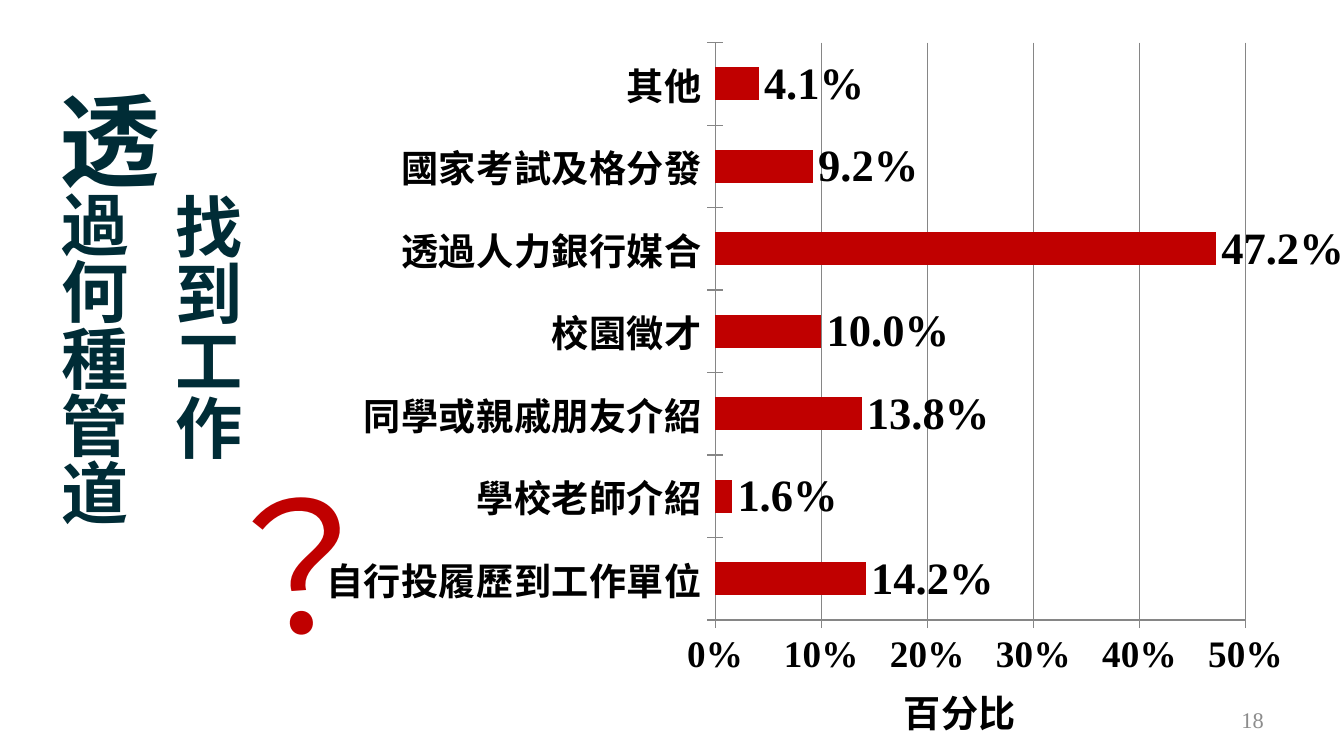
from lxml.etree import SubElement
from pptx import Presentation
from pptx.chart.data import CategoryChartData
from pptx.dml.color import RGBColor
from pptx.enum.chart import XL_CHART_TYPE as ChartType
from pptx.enum.chart import XL_LABEL_POSITION as LabelPos
from pptx.enum.chart import XL_TICK_MARK as Tick
from pptx.enum.text import MSO_ANCHOR as Anchor
from pptx.enum.text import PP_ALIGN as Align
from pptx.oxml.ns import qn
from pptx.util import Emu, Pt

PX = 914400 / 134.4
COLORS = {"red": "C00000", "teal": "002C36", "black": "000000",
          "axis": "868686", "number": "8C8C8C"}
JP, SC, TIMES = "Noto Sans CJK JP", "Noto Sans CJK SC", "Times New Roman"
CHANNELS = [("自行投履歷到工作單位", 0.142), ("學校老師介紹", 0.016),
            ("同學或親戚朋友介紹", 0.138), ("校園徵才", 0.1),
            ("透過人力銀行媒合", 0.472), ("國家考試及格分發", 0.092),
            ("其他", 0.041)]


def px(n):
    return Emu(round(n * PX))


def rgb(name):
    return RGBColor.from_string(COLORS[name])


def style_font(font, size, color, latin, east=SC, bold=False):
    font.size, font.bold, font.name = Pt(size), bold, latin
    font.color.rgb = rgb(color)
    SubElement(font._element, qn("a:ea")).set("typeface", east)
    # The latin and East Asian faces must stay in schema order
    font._element.append(font._element.find(qn("a:ea")))


def add_text_box(slide, box, anchor=Anchor.TOP):
    s = slide.shapes.add_textbox(*map(px, box))
    s.text_frame.word_wrap = True
    s.text_frame.vertical_anchor = anchor
    return s


def add_run(p, text, size, color, latin, east=SC, bold=False):
    r = p.add_run()
    r.text = text
    style_font(r.font, size, color, latin, east, bold)


def set_layout(parent, after, **values):
    """Place a chart part by fractions of the chart area."""
    for old in parent.findall(qn("c:layout")):
        parent.remove(old)
    layout = SubElement(parent, qn("c:layout"))
    manual = SubElement(layout, qn("c:manualLayout"))
    for key, value in values.items():
        SubElement(manual, qn(f"c:{key}")).set("val", str(value))
    if after is None:
        parent.insert(0, layout)
    else:
        after.addnext(layout)


def style_axis(axis):
    axis.major_tick_mark = Tick.CROSS
    axis.minor_tick_mark = Tick.NONE
    axis.format.line.color.rgb = rgb("axis")
    style_font(axis.tick_labels.font, 20, "black", TIMES, bold=True)


def add_bar_chart(slide, box):
    data = CategoryChartData(number_format="0.0%")
    data.categories = [name for name, _ in CHANNELS]
    data.add_series("Series 1", [share for _, share in CHANNELS])
    chart = slide.shapes.add_chart(ChartType.BAR_CLUSTERED, *map(px, box),
                                   data).chart
    chart.has_legend = chart.has_title = False
    style_font(chart.font, 20, "black", TIMES)

    # Bars and value labels
    plot = chart.plots[0]
    plot.gap_width, plot.vary_by_categories = 150, False
    fill = plot.series[0].format.fill
    fill.solid()
    fill.fore_color.rgb = rgb("red")
    plot.has_data_labels = True
    labels = plot.data_labels
    labels.show_value = True
    labels.number_format, labels.number_format_is_linked = "0.0%", False
    labels.position = LabelPos.OUTSIDE_END
    style_font(labels.font, 24, "black", TIMES, bold=True)

    # Axes
    style_axis(chart.category_axis)
    axis = chart.value_axis
    style_axis(axis)
    axis.minimum_scale, axis.maximum_scale, axis.major_unit = 0, 0.5, 0.1
    axis.tick_labels.number_format = "0%"
    axis.tick_labels.number_format_is_linked = False
    axis.has_major_gridlines = True
    axis.major_gridlines.format.line.color.rgb = rgb("axis")
    title = axis.axis_title
    add_run(title.text_frame.paragraphs[0], "百分比", 20, "black", TIMES,
            bold=True)

    # Positions inside the chart
    title_xml = title._element
    set_layout(title_xml, title_xml.find(qn("c:tx")),
               xMode="edge", yMode="edge", x=0.57, y=0.84)
    set_layout(chart._chartSpace.chart.plotArea, None, layoutTarget="inner",
               xMode="edge", yMode="edge", x=0.393, y=0.005, w=0.517, h=0.765)


def add_vertical_title(slide, box):
    tf = add_text_box(slide, box).text_frame
    tf._txBody.bodyPr.set("vert", "eaVert")
    p = tf.paragraphs[0]
    p._p.get_or_add_pPr().set("marL", str(px(103)))
    add_run(p, "找到工作", 36, "teal", SC, bold=True)
    p = tf.add_paragraph()
    add_run(p, "透", 54, "teal", SC, bold=True)
    add_run(p, "過何種管道", 36, "teal", SC, bold=True)


def add_question_mark(slide, box):
    s = add_text_box(slide, box)
    s.rotation = 355.9
    p = s.text_frame.paragraphs[0]
    p.space_before = Pt(19)
    add_run(p, "？", 96, "red", JP, JP)


def add_page_number(slide, box):
    p = add_text_box(slide, box, Anchor.MIDDLE).text_frame.paragraphs[0]
    p.alignment = Align.RIGHT
    add_run(p, "18", 12, "number", TIMES)


def main():
    prs = Presentation()
    prs.slide_width, prs.slide_height = px(1344), px(756)
    slide = prs.slides.add_slide(prs.slide_layouts[6])
    add_question_mark(slide, (198, 449, 202, 254))
    add_bar_chart(slide, (312, 39, 1032, 755))
    add_vertical_title(slide, (-77, 77, 331, 650))
    add_page_number(slide, (964, 700, 313, 40))
    prs.save("out.pptx")


if __name__ == "__main__":
    main()
